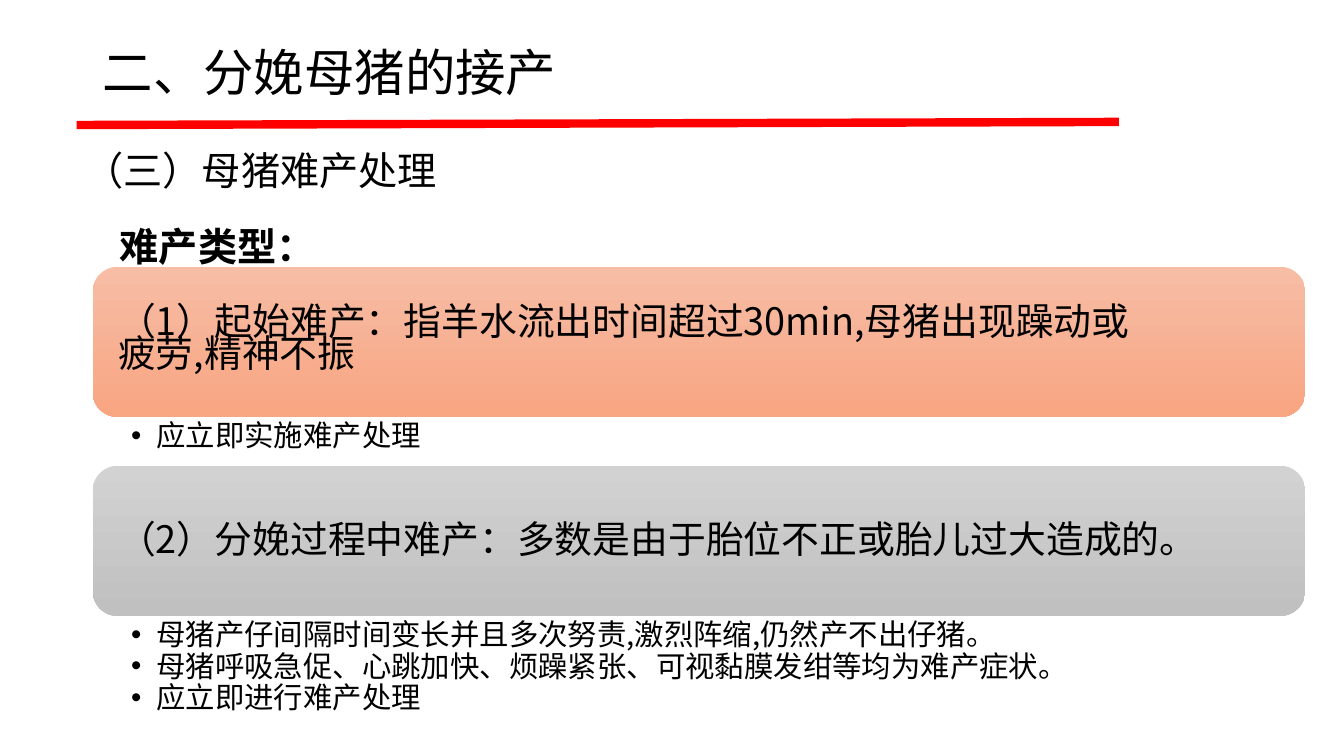
from pptx import Presentation
from pptx.dml.color import RGBColor
from pptx.enum.shapes import MSO_CONNECTOR, MSO_SHAPE
from pptx.enum.text import MSO_ANCHOR, MSO_AUTO_SIZE, PP_ALIGN
from pptx.oxml.ns import qn
from pptx.util import Pt
from lxml.etree import SubElement

FONT = "Noto Sans CJK SC"
LEFT, WIDTH = 66.2, 866.2
CARD_HEIGHT = 107.2
TYPES = [
    dict(top=190.6, list_height=35.3, spacing=0.72, colors=("F7BDA5", "F8A582"),
         heading="（1）起始难产：指羊水流出时间超过30min,母猪出现躁动或\v疲劳,精神不振",
         points=["应立即实施难产处理"]),
    dict(top=332.7, list_height=94.3, spacing=0.9, colors=("D2D2D2", "C0C0C0"),
         heading="（2）分娩过程中难产：多数是由于胎位不正或胎儿过大造成的。",
         points=["母猪产仔间隔时间变长并且多次努责,激烈阵缩,仍然产不出仔猪。",
                 "母猪呼吸急促、心跳加快、烦躁紧张、可视黏膜发绀等均为难产症状。",
                 "应立即进行难产处理"]),
]


def color(value):
    return RGBColor.from_string(value)


def set_values(target, values):
    for name, value in values.items():
        setattr(target, name, value)


def place(shape, left, top, width, height):
    set_values(shape, dict(left=Pt(left), top=Pt(top), width=Pt(width), height=Pt(height)))


def write(shape, lines, size, spacing=0.9, insets=(7.2, 3.6, 7.2, 3.6),
          anchor=MSO_ANCHOR.MIDDLE, bold=False, bullet=False):
    frame = shape.text_frame
    sides = ("margin_left", "margin_top", "margin_right", "margin_bottom")
    set_values(frame, dict(zip(sides, map(Pt, insets))))
    set_values(frame, dict(word_wrap=True, auto_size=MSO_AUTO_SIZE.NONE, vertical_anchor=anchor))
    for index, line in enumerate(lines):
        para = frame.add_paragraph() if index else frame.paragraphs[0]
        para.text = line
        set_values(para, dict(alignment=PP_ALIGN.LEFT, line_spacing=spacing,
                              space_before=Pt(0), space_after=Pt(0)))
        if bullet:
            properties = para._p.get_or_add_pPr()
            properties.set("marL", str(Pt(18)))
            properties.set("indent", str(Pt(-18)))
            SubElement(properties, qn("a:buChar")).set("char", "•")
        for span in para.runs:
            set_values(span.font, dict(name=FONT, size=Pt(size), bold=bold))
            span.font.color.rgb = color("000000")
            SubElement(span._r.get_or_add_rPr(), qn("a:ea")).set("typeface", FONT)


def add_header(page, left, top, width, height):
    place(page.shapes.title, left, top, width, height)
    write(page.shapes.title, ["二、分娩母猪的接产"], 36)
    rule = page.shapes.add_connector(MSO_CONNECTOR.STRAIGHT, Pt(left - 11.5), Pt(top + 87.9),
                                     Pt(left + 733), Pt(top + 85.7))
    rule.line.color.rgb = color("FF0000")
    rule.line.width = Pt(6)
    SubElement(rule._element.spPr, qn("a:effectLst"))


def add_label(page, left, top, width, height, text, **style):
    box = page.shapes.add_textbox(Pt(left), Pt(top), Pt(width), Pt(height))
    write(box, [text], 28, **style)


def add_type(page, body, left, width, top, list_height, spacing, colors, heading, points):
    card = page.shapes.add_shape(MSO_SHAPE.ROUNDED_RECTANGLE, Pt(left), Pt(top),
                                 Pt(width), Pt(CARD_HEIGHT))
    card.shadow.inherit = False
    card.line.fill.background()
    card.fill.gradient()
    card.fill.gradient_angle = 270
    for stop, value, position in zip(card.fill.gradient_stops, colors, (0, 1)):
        stop.color.rgb = color(value)
        stop.position = position
    write(card, [heading], 27, spacing=spacing, insets=(13, 13, 13, 13))
    place(body, left, top + CARD_HEIGHT, width, list_height)
    write(body, points, 21, insets=(27.4, 2.9, 15.1, 2.9), anchor=MSO_ANCHOR.TOP, bullet=True)


def main():
    deck = Presentation()
    set_values(deck, dict(slide_width=Pt(960), slide_height=Pt(540)))
    page = deck.slides.add_slide(deck.slide_layouts[3])
    bodies = [page.placeholders[1], page.placeholders[2]]
    add_header(page, LEFT, 1.4, 828, 104.4)
    add_label(page, 53.3, 71.3, 828, 104.4, "（三）母猪难产处理")
    add_label(page, 78.5, 138.2, 480, 53.3, "难产类型：", spacing=1.5,
              anchor=MSO_ANCHOR.TOP, bold=True)
    for body, kind in zip(bodies, TYPES):
        add_type(page, body, LEFT, WIDTH, **kind)
    deck.save("out.pptx")


if __name__ == "__main__":
    main()
